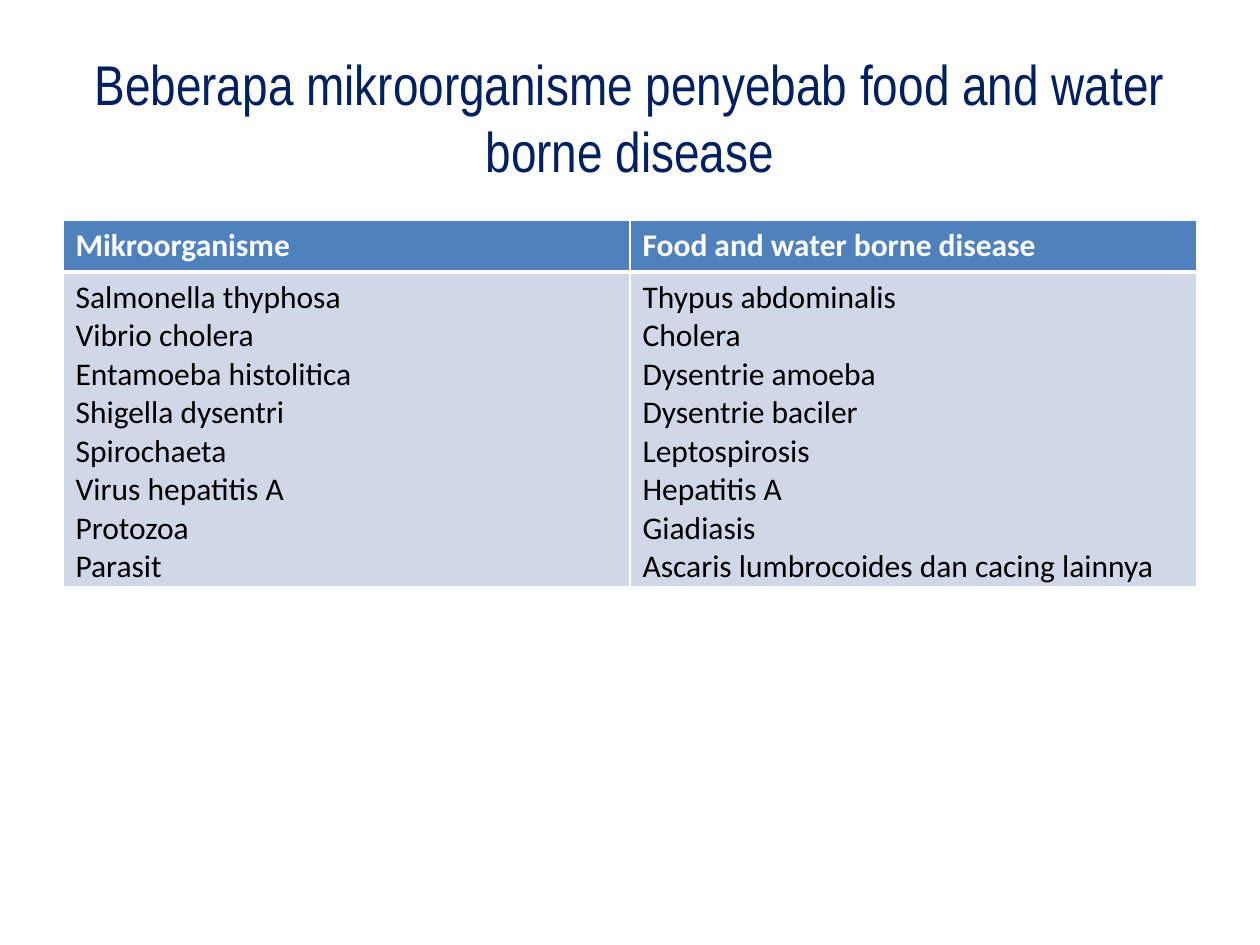
import pptx
import pptx.dml.color
import pptx.enum.text
import pptx.oxml.ns
import pptx.util
from lxml import etree

Inches = pptx.util.Inches
Pt = pptx.util.Pt

TITLE_FORMAT = {"name": "Arial Narrow", "size": Pt(32), "bold": False}
HEADER_FORMAT = {"name": "Calibri", "size": Pt(18), "bold": True}
BODY_FORMAT = {**HEADER_FORMAT, "bold": False}

HEADERS = ("Mikroorganisme", "Food and water borne disease")
DISEASES = (
    ("Salmonella thyphosa", "Thypus abdominalis"),
    ("Vibrio cholera", "Cholera"),
    ("Entamoeba histolitica", "Dysentrie amoeba"),
    ("Shigella dysentri", "Dysentrie baciler"),
    ("Spirochaeta", "Leptospirosis"),
    ("Virus hepatitis A", "Hepatitis A"),
    ("Protozoa", "Giadiasis"),
    ("Parasit", "Ascaris lumbrocoides dan cacing lainnya"),
)


def color(value):
    return pptx.dml.color.RGBColor.from_string(value)


class SlideBuilder:
    navy, blue, pale = "002060", "4F81BD", "D0D8E8"
    white, black = "FFFFFF", "000000"

    def __init__(self, deck):
        self.slide = deck.slides.add_slide(deck.slide_layouts[6])

    def add_lines(self, frame, lines, text_format, text_color, align):
        for index, line in enumerate(lines):
            para = frame.paragraphs[0] if index == 0 else frame.add_paragraph()
            para.alignment = align
            span = para.add_run()
            span.text = line
            for name, value in text_format.items():
                setattr(span.font, name, value)
            span.font.color.rgb = color(text_color)

    def title(self, text, left, top, width, height):
        box = self.slide.shapes.add_textbox(
            Inches(left), Inches(top), Inches(width), Inches(height))
        frame = box.text_frame
        frame.word_wrap = True
        frame.vertical_anchor = pptx.enum.text.MSO_ANCHOR.MIDDLE
        self.add_lines(frame, [text], TITLE_FORMAT, self.navy,
                       pptx.enum.text.PP_ALIGN.CENTER)

    def borders(self, cell, widths):
        properties = cell._tc.get_or_add_tcPr()
        qn = pptx.oxml.ns.qn
        for side, width in widths.items():
            line = etree.SubElement(properties, qn(f"a:ln{side}"), w=str(Pt(width)))
            fill = etree.SubElement(line, qn("a:solidFill"))
            etree.SubElement(fill, qn("a:srgbClr"), val=self.white)

    def cell(self, cell, lines, text_format, text_color, fill, widths):
        self.borders(cell, widths)
        cell.fill.solid()
        cell.fill.fore_color.rgb = color(fill)
        self.add_lines(cell.text_frame, lines, text_format, text_color,
                       pptx.enum.text.PP_ALIGN.LEFT)

    def table(self, headers, columns, left, top, width, heights):
        table = self.slide.shapes.add_table(
            len(heights), len(headers), Inches(left), Inches(top),
            Inches(width), Inches(sum(heights))).table
        for row, height in zip(table.rows, heights):
            row.height = Inches(height)
        for index, (header, lines) in enumerate(zip(headers, columns)):
            self.cell(table.cell(0, index), [header], HEADER_FORMAT, self.white,
                      self.blue, {"L": 1, "R": 1, "T": 1, "B": 3})
            self.cell(table.cell(1, index), lines, BODY_FORMAT, self.black,
                      self.pale, {"L": 1, "R": 1, "T": 3, "B": 1})


def main():
    deck = pptx.Presentation()
    deck.slide_width, deck.slide_height = Inches(10), Inches(7.5)
    builder = SlideBuilder(deck)

    # Title
    builder.title("Beberapa mikroorganisme penyebab food and water borne disease",
                  0.5, 0.3, 9, 1.25)

    # Microorganisms and the diseases they cause
    builder.table(HEADERS, zip(*DISEASES), 0.5, 1.75, 9, (0.41, 2.5))

    deck.save("out.pptx")


if __name__ == "__main__":
    main()
